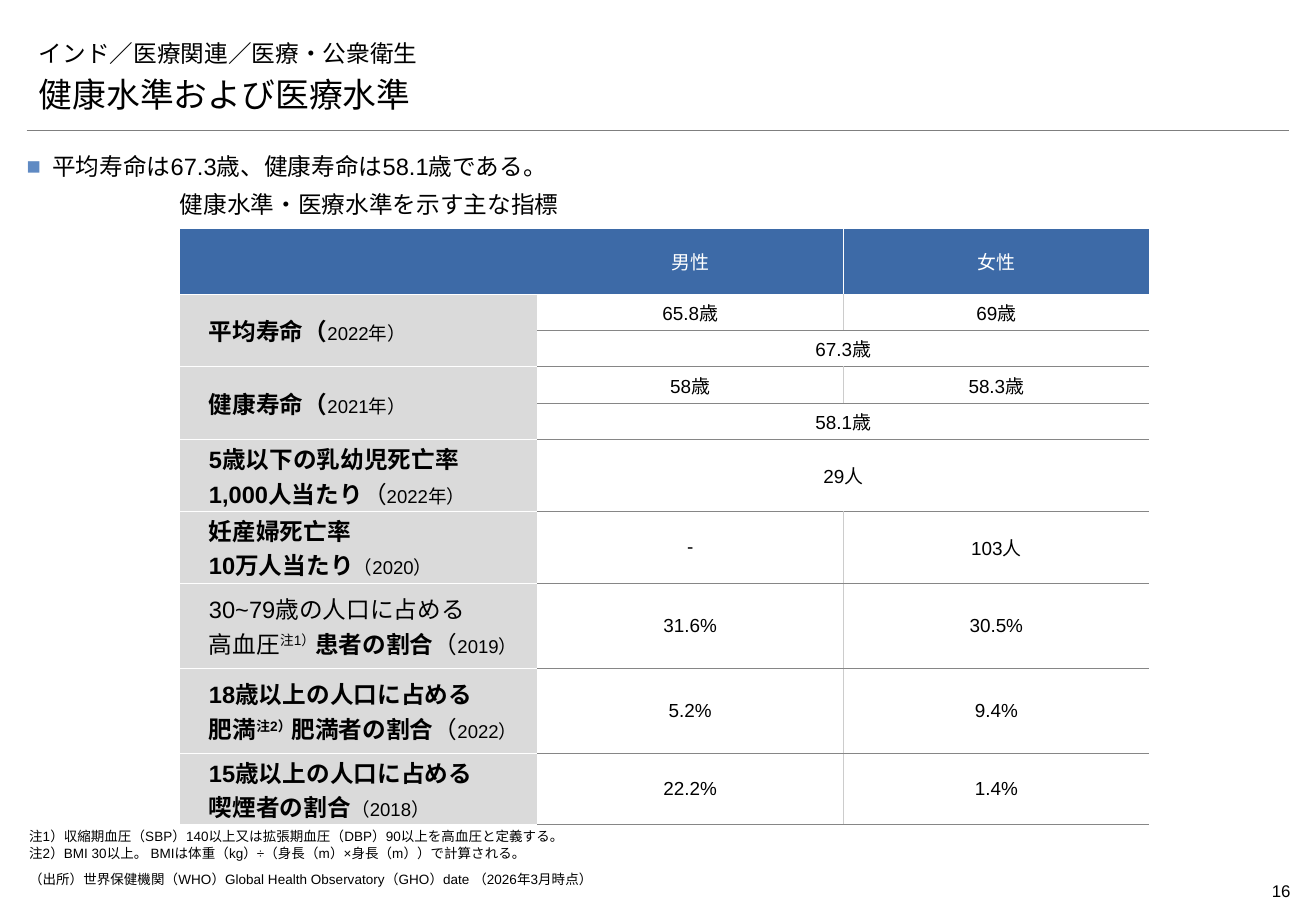
"""Builds the slide on health and medical standards in India."""
from lxml import etree
from pptx import Presentation
from pptx import util as u
from pptx.dml import color
from pptx.enum import shapes, text
from pptx.oxml import ns

ASIAN = "Noto Sans CJK JP"
BLUE, GREY, WHITE, BLACK = "3D6AA7", "DADADA", "FFFFFF", "000000"
RULE, SPLIT = "868686", "CCCCCC"
LEFT, MID, RIGHT = text.PP_ALIGN.LEFT, text.PP_ALIGN.CENTER, text.PP_ALIGN.RIGHT
TOP, LOW = text.MSO_ANCHOR.TOP, text.MSO_ANCHOR.BOTTOM
PAD = (0.1, 0.05, 0.1, 0.05)
NONE = (0, 0, 0, 0)

WIDTHS = [2.94, 2.52, 2.52]
HEIGHTS = [0.54] + [0.3] * 4 + [0.59] * 2 + [0.7] * 2 + [0.59]
LABELS = {
    1: [[("平均寿命（", 14, True), ("2022年）", 11)]],
    3: [[("健康寿命（", 14, True), ("2021年）", 11)]],
    5: [[("5歳以下の乳幼児死亡率", 14, True)],
        [("1,000人当たり", 14, True), ("（", 14), ("2022年）", 11)]],
    6: [[("妊産婦死亡率", 14, True)],
        [("10万人当たり", 14, True), ("（2020）", 11)]],
    7: [[("30~79歳の人口に占める", 14)],
        [("高血圧", 14), ("注1）", 14, False, 30), ("患者の割合", 14, True),
         ("（", 14), ("2019）", 11)]],
    8: [[("18歳以上の人口に占める", 14, True)],
        [("肥満", 14, True), ("注2）", 14, True, 30), ("肥満者の割合", 14, True),
         ("（", 14), ("2022）", 11)]],
    9: [[("15歳以上の人口に占める", 14, True)],
        [("喫煙者の割合", 14, True), ("（2018）", 11)]],
}
VALUES = [["65.8歳", "69歳"], ["67.3歳"], ["58歳", "58.3歳"], ["58.1歳"],
          ["29人"], ["-", "103人"], ["31.6%", "30.5%"], ["5.2%", "9.4%"],
          ["22.2%", "1.4%"]]


def rgb(code):
    """Turn a hex string into a colour."""
    return color.RGBColor.from_string(code)


def add_run(para, words, size, bold=False, base=0, face="Arial", ink=BLACK):
    """Add one run of text with its look."""
    run = para.add_run()
    run.text = words
    font = run.font
    font.size, font.bold, font.name = u.Pt(size), bold, face
    font.color.rgb = rgb(ink)
    props = run._r.get_or_add_rPr()
    etree.SubElement(props, ns.qn("a:ea"), typeface=ASIAN)
    if base:
        props.set("baseline", str(base * 1000))


def fill_text(frame, lines, align=LEFT, **look):
    """Write each line of runs as a paragraph."""
    for num, line in enumerate(lines):
        para = frame.add_paragraph() if num else frame.paragraphs[0]
        para.alignment = align
        for run in line:
            add_run(para, *run, **look)


def add_box(slide, place, lines, pad=PAD, anchor=TOP, align=LEFT, **look):
    """Add a text box and return its first paragraph."""
    frame = slide.shapes.add_textbox(*map(u.Inches, place)).text_frame
    frame.word_wrap = True
    frame.vertical_anchor = anchor
    (frame.margin_left, frame.margin_top,
     frame.margin_right, frame.margin_bottom) = map(u.Inches, pad)
    fill_text(frame, lines, align, **look)
    return frame.paragraphs[0]


def add_point(slide, place, words):
    """Add a key message with a square bullet."""
    para = add_box(slide, place, [], NONE)
    props = para._p.get_or_add_pPr()
    props.set("marL", str(u.Inches(0.21)))
    props.set("indent", str(-u.Inches(0.21)))
    tint = etree.SubElement(props, ns.qn("a:buClr"))
    etree.SubElement(tint, ns.qn("a:srgbClr"), val="5F8AC3")
    etree.SubElement(props, ns.qn("a:buFont"), typeface="Arial")
    etree.SubElement(props, ns.qn("a:buChar"), char="■")
    para.alignment = text.PP_ALIGN.JUSTIFY
    para.line_spacing, para.space_after = 1.1, u.Pt(2)
    add_run(para, words, 14)


def add_line(slide, start, end):
    """Add a thin straight rule."""
    line = slide.shapes.add_connector(
        shapes.MSO_CONNECTOR.STRAIGHT, *map(u.Inches, start + end))
    line.line.color.rgb = rgb("7F7F7F")
    line.line.width = u.Pt(0.25)
    etree.SubElement(line._element.spPr, ns.qn("a:effectLst"))


def add_edge(cell, side, ink, width=0.5):
    """Draw one border of a cell, or clear it when ink is None."""
    edge = etree.SubElement(cell._tc.get_or_add_tcPr(), ns.qn("a:ln" + side),
                            w=str(u.Pt(width)))
    if ink is None:
        etree.SubElement(edge, ns.qn("a:noFill"))
        return
    solid = etree.SubElement(edge, ns.qn("a:solidFill"))
    etree.SubElement(solid, ns.qn("a:srgbClr"), val=ink)


def style_cell(cell, row, col):
    """Set the borders, fill and margins of a cell."""
    pair = row == 0 or len(VALUES[row - 1]) == 2
    split = (WHITE, 0.5) if row == 0 else (SPLIT, 1)
    add_edge(cell, "L", *(split if col == 2 and pair else (None,)))
    if col == 1 and pair:
        add_edge(cell, "R", *split)
    else:
        add_edge(cell, "R", WHITE if row == col == 0 else None)
    add_edge(cell, "T", RULE if col and row > 1 else WHITE)
    add_edge(cell, "B", RULE if col and row else WHITE)
    cell.fill.solid()
    cell.fill.fore_color.rgb = rgb(BLUE if row == 0 else WHITE if col else GREY)
    cell.vertical_anchor = text.MSO_ANCHOR.MIDDLE
    pad = (0.04, 0.02, 0.04, 0.02) if col else (0.24, 0, 0, 0)
    (cell.margin_left, cell.margin_top,
     cell.margin_right, cell.margin_bottom) = map(u.Inches, pad)


def add_grid(slide, left, top):
    """Add the table of health measures."""
    frame = slide.shapes.add_table(
        len(HEIGHTS), len(WIDTHS), u.Inches(left), u.Inches(top),
        u.Inches(sum(WIDTHS)), u.Inches(sum(HEIGHTS)))
    grid = frame.table
    grid.horz_banding = False
    for col, width in enumerate(WIDTHS):
        grid.columns[col].width = u.Inches(width)
    for row, height in enumerate(HEIGHTS):
        grid.rows[row].height = u.Inches(height)
        for col in range(len(WIDTHS)):
            style_cell(grid.cell(row, col), row, col)
    for row in (1, 3):
        grid.cell(row, 0).merge(grid.cell(row + 1, 0))
    for col, name in enumerate(["男性", "女性"], 1):
        fill_text(grid.cell(0, col).text_frame, [[(name, 11.2)]], MID,
                  face=ASIAN, ink=WHITE)
    for row, lines in LABELS.items():
        fill_text(grid.cell(row, 0).text_frame, lines)
    for row, values in enumerate(VALUES, 1):
        if len(values) == 1:
            grid.cell(row, 1).merge(grid.cell(row, 2))
        for col, value in enumerate(values, 1):
            fill_text(grid.cell(row, col).text_frame, [[(value, 11.2)]], MID)


def main():
    """Build and save the slide."""
    deck = Presentation()
    deck.slide_width, deck.slide_height = u.Inches(10.83), u.Inches(7.5)
    slide = deck.slides.add_slide(deck.slide_layouts[6])
    add_line(slide, (0.22, 1.07), (10.61, 1.07))
    add_box(slide, (9.83, 7.2, 0.79, 0.27), [[("16", 10)]],
            (0, 0.05, 0, 0.05), align=RIGHT)
    add_box(slide, (0.22, 0.21, 10.39, 0.39),
            [[("インド／医療関連／医療・公衆衛生", 14)]], anchor=LOW, face="Montserrat")
    add_box(slide, (0.22, 0.6, 10.4, 0.39),
            [[("健康水準および医療水準", 20)]], anchor=LOW, face="Montserrat")
    add_point(slide, (0.22, 1.23, 10.4, 0.24),
              "平均寿命は67.3歳、健康寿命は58.1歳である。")
    add_box(slide, (1.48, 1.49, 5.98, 0.39),
            [[("健康水準・医療水準を示す主な指標", 14)]],
            (0, 0.05, 0, 0.08), LOW, face="Montserrat")
    add_box(slide, (0.24, 6.82, 6.14, 0.16), [
        [("注1）収縮期血圧（SBP）140以上又は拡張期血圧（DBP）90以上を高血圧と定義する。", 8)],
        [("注2）BMI 30以上。 BMIは体重（kg）÷（身長（m）×身長（m））で計算される。", 8)],
    ], NONE)
    add_grid(slide, 1.48, 1.88)
    add_box(slide, (0.24, 7.17, 6.14, 0.16), [[(
        "（出所）世界保健機関（WHO）Global Health Observatory（GHO）date （2026年3月時点）", 8)]], NONE)
    deck.save("out.pptx")


if __name__ == "__main__":
    main()
